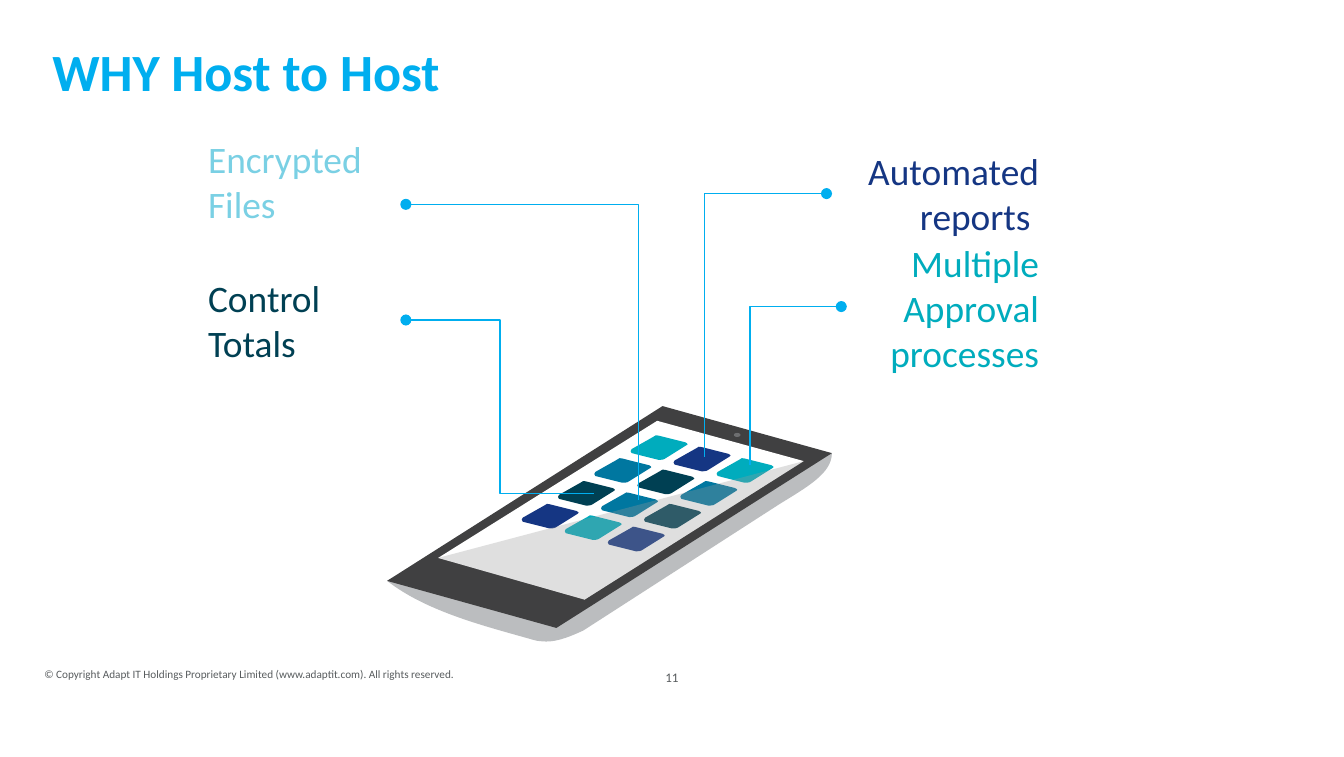
from lxml import etree
from pptx import Presentation
from pptx import util as u
from pptx.dml.color import RGBColor
from pptx.enum import shapes, text
from pptx.oxml.ns import qn

COLORS = {
    "sky": "00AEEF", "grey": "585C5E", "teal": "00ACBD", "navy": "153683",
    "petrol": "004053", "blue": "0077A0", "pale": "7AD0E4", "edge": "BBBDBF",
    "body": "404041", "screen": "FFFFFF", "camera": "6D6E70", "glare": "999999",
}
LEFT, CENTER, RIGHT = text.PP_ALIGN.LEFT, text.PP_ALIGN.CENTER, text.PP_ALIGN.RIGHT

prs = Presentation()
prs.slide_width, prs.slide_height = u.Inches(10), u.Inches(5.63)
s = prs.slides.add_slide(prs.slide_layouts[6])


def paint(sp, color):
    sp.shadow.inherit = False
    sp.fill.solid()
    sp.fill.fore_color.rgb = RGBColor.from_string(COLORS[color])
    sp.line.fill.background()


def add_outline(start, segments, color, dx=0, dy=0):
    """Closed shape from (x, y) lines and six-number Bezier curves, shifted by dx, dy."""
    points = [start] + [seg[i:i + 2] for seg in segments for i in range(0, len(seg), 2)]
    emu = [(u.Inches(x + dx), u.Inches(y + dy)) for x, y in points]
    fb = s.shapes.build_freeform(*emu[0])
    fb.add_line_segments(emu[1:], close=True)
    sp = fb.convert_to_shape()
    paint(sp, color)
    steps = iter(sp._element.spPr.findall(".//" + qn("a:lnTo")))
    for seg in segments:
        step = next(steps)
        if len(seg) == 6:
            step.tag = qn("a:cubicBezTo")
            for extra in (next(steps), next(steps)):
                step.append(extra[0])
                extra.getparent().remove(extra)
    return sp


# Phone
add_outline((4.98, 3.21), [
    (2.88, 4.32), (3.16, 4.54, 3.58, 4.65, 3.9, 4.74), (3.94, 4.75, 3.99, 4.77, 4.03, 4.77),
    (4.12, 4.78, 4.21, 4.75, 4.34, 4.69), (4.9, 4.33, 5.24, 4.11, 5.8, 3.75),
    (6.01, 3.62, 6.19, 3.52, 6.19, 3.37)], "edge")
add_outline((4.93, 3.02), [(2.88, 4.32), (4.14, 4.67), (6.19, 3.37)], "body")
add_outline((4.89, 3.13), [(3.26, 4.15), (4.35, 4.46), (5.98, 3.43)], "screen")
camera = s.shapes.add_shape(shapes.MSO_SHAPE.OVAL, u.Inches(5.46), u.Inches(3.22),
                            u.Inches(0.05), u.Inches(0.03))
paint(camera, "camera")

# App tiles: rows run down the screen, columns run up to its left edge
TILE = [(0.41, 0.06), (0.43, 0.07, 0.43, 0.08, 0.42, 0.08),
        (0.26, 0.18), (0.25, 0.19, 0.22, 0.19, 0.21, 0.19),
        (0.01, 0.14), (0, 0.13, 0, 0.12, 0.01, 0.11),
        (0.17, 0.02), (0.18, 0.01, 0.2, 0, 0.21, 0.01)]
TILE_ROWS = [("teal", "navy", "teal"), ("blue", "petrol", "blue"),
             ("petrol", "blue", "petrol"), ("navy", "teal", "navy")]
for row, row_colors in enumerate(TILE_ROWS):
    for col, color in enumerate(row_colors):
        add_outline((0.21, 0.01), TILE, color,
                    dx=5.33 - 0.32 * col - 0.27 * row,
                    dy=3.4 + 0.17 * (row - col / 2))

glare = add_outline((5.98, 3.43), [(3.26, 4.15), (4.35, 4.46)], "glare")
srgb = glare._element.spPr.find(".//" + qn("a:srgbClr"))
etree.SubElement(srgb, qn("a:alpha"), val="31000")

# Callout lines, from the dot beside the label to the tile
CALLOUTS = [
    ((6.26, 2.28), (5.58, 3.46), "bentConnector2"),
    ((6.15, 1.44), (5.24, 3.4), "bentConnector2"),
    ((3.02, 2.38), (4.42, 3.67), "bentConnector3"),
    ((3.02, 1.52), (4.75, 3.72), "bentConnector2"),
]
for dot, tile, bend in CALLOUTS:
    line = s.shapes.add_connector(shapes.MSO_CONNECTOR.ELBOW,
                                  *(u.Inches(v) for v in dot + tile))
    line.line.width = u.Pt(0.75)
    line.line.color.rgb = RGBColor.from_string(COLORS["sky"])
    sp_pr = line._element.spPr
    sp_pr.find(qn("a:prstGeom")).set("prst", bend)
    etree.SubElement(sp_pr.find(qn("a:ln")), qn("a:headEnd"), type="oval")
    etree.SubElement(sp_pr, qn("a:effectLst"))

# Texts: wording, box, inset, alignment, line spacing, colour, font values
TEXTS = [
    ("© Copyright Adapt IT Holdings Proprietary Limited (www.adaptit.com). All rights reserved.",
     (0.33, 4.78, 3.45, 0.46), 0, LEFT, None, "grey", {"size": u.Pt(6)}),
    ("11", (4.31, 4.78, 1.38, 0.52), 0, CENTER, None, "grey", {"size": u.Pt(7)}),
    ("WHY Host to Host", (0.39, 0.34, 9.33, 0.53), 0, LEFT, u.Pt(22.6), "sky",
     {"size": u.Pt(28), "bold": True}),
    ("Multiple Approval processes", (6.26, 1.93, 1.57, 0.71), 0.1, RIGHT, None, "teal",
     {"size": u.Pt(20)}),
    ("Automated reports ", (6.15, 1.24, 1.68, 0.39), 0.1, RIGHT, None, "navy",
     {"size": u.Pt(20)}),
    ("Control Totals", (1.45, 2.13, 1.57, 0.5), 0.1, LEFT, None, "petrol",
     {"size": u.Pt(20)}),
    ("Encrypted Files", (1.45, 1.23, 1.57, 0.23), 0.1, LEFT, None, "pale",
     {"size": u.Pt(20)}),
]
for wording, box, inset, align, spacing, color, font in TEXTS:
    tf = s.shapes.add_textbox(*(u.Inches(v) for v in box)).text_frame
    tf.word_wrap = True
    tf.vertical_anchor = text.MSO_ANCHOR.MIDDLE
    for side in ("left", "top", "right", "bottom"):
        setattr(tf, f"margin_{side}", u.Inches(inset))
    p = tf.paragraphs[0]
    p.alignment = align
    p.line_spacing = spacing
    r = p.add_run()
    r.text = wording
    for name, value in {"name": "Calibri", **font}.items():
        setattr(r.font, name, value)
    r.font.color.rgb = RGBColor.from_string(COLORS[color])

prs.save("out.pptx")
